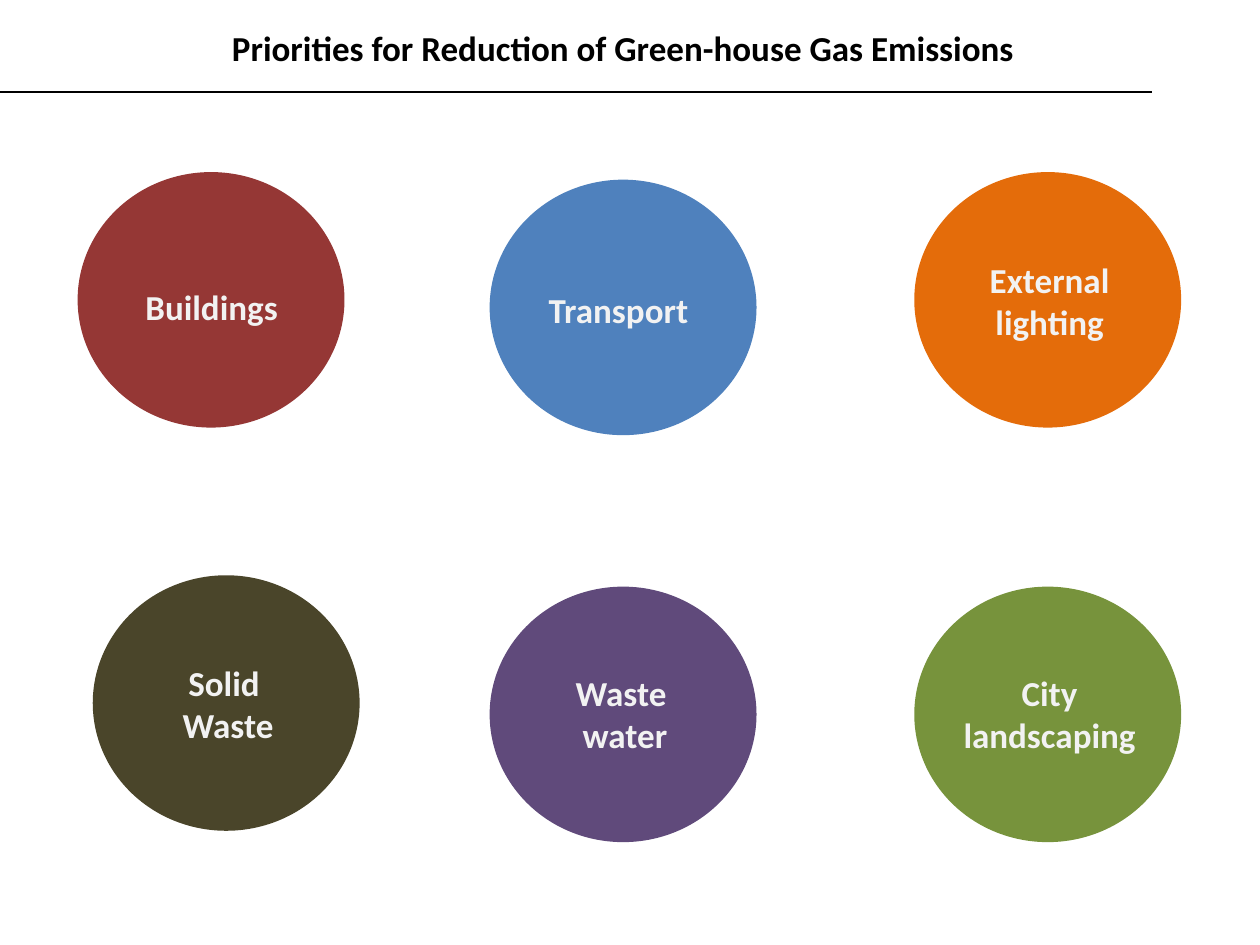
"""Build a slide of six priority areas for cutting green-house gas emissions."""
from dataclasses import dataclass

from lxml import etree
from pptx import Presentation
from pptx.dml.color import RGBColor
from pptx.enum.shapes import MSO_CONNECTOR, MSO_SHAPE
from pptx.enum.text import MSO_ANCHOR, MSO_AUTO_SIZE, PP_ALIGN
from pptx.oxml.ns import qn
from pptx.util import Inches, Pt

ELLIPSE = MSO_SHAPE.OVAL
STRAIGHT = MSO_CONNECTOR.STRAIGHT
CENTER = PP_ALIGN.CENTER
TOP = MSO_ANCHOR.TOP
FIT_SHAPE = MSO_AUTO_SIZE.SHAPE_TO_FIT_TEXT
NO_FIT = MSO_AUTO_SIZE.NONE


@dataclass(frozen=True)
class Theme:
    """Colours, typeface and sizes of the slide."""
    font: str = "Calibri"
    text_size: float = 20
    ink: str = "000000"
    label: str = "F2F2F2"
    buildings: str = "953735"
    transport: str = "4F81BD"
    lighting: str = "E46C0A"
    solid_waste: str = "4A452A"
    waste_water: str = "604A7B"
    landscaping: str = "77933C"
    rule_width: float = 1.25
    outline_width: float = 2


class SlideBuilder:
    """Draw themed elements on the current slide."""

    def __init__(self, slide, theme):
        """Keep the slide and its theme."""
        self.slide = slide
        self.theme = theme

    def set_text(self, frame, lines, color, fit):
        """Fill a text frame with centred bold lines."""
        frame.text = "\n".join(lines)
        frame.word_wrap = True
        frame.auto_size = fit
        frame.vertical_anchor = TOP
        for paragraph in frame.paragraphs:
            paragraph.alignment = CENTER
            font = paragraph.font
            font.name = self.theme.font
            font.size = Pt(self.theme.text_size)
            font.bold = True
            font.color.rgb = RGBColor.from_string(color)

    def title(self, text, left, top, width, height):
        """Place and format the title placeholder."""
        heading = self.slide.shapes.title
        heading.left, heading.top = Inches(left), Inches(top)
        heading.width, heading.height = Inches(width), Inches(height)
        self.set_text(heading.text_frame, [text], self.theme.ink, NO_FIT)

    def rule(self, left, right, top):
        """Draw a horizontal line."""
        line = self.slide.shapes.add_connector(
            STRAIGHT, Inches(left), Inches(top), Inches(right), Inches(top))
        line.line.color.rgb = RGBColor.from_string(self.theme.ink)
        line.line.width = Pt(self.theme.rule_width)
        etree.SubElement(line._element.spPr, qn("a:effectLst"))

    def priority(self, lines, color, left, top, label_left, label_top, label_height):
        """Group a coloured ellipse with its label."""
        group = self.slide.shapes.add_group_shape()
        fill = RGBColor.from_string(color)
        disc = group.shapes.add_shape(
            ELLIPSE, Inches(left), Inches(top), Inches(2.09), Inches(2))
        disc.shadow.inherit = False
        disc.fill.solid()
        disc.fill.fore_color.rgb = fill
        disc.line.color.rgb = fill
        disc.line.width = Pt(self.theme.outline_width)
        label = group.shapes.add_textbox(
            Inches(label_left), Inches(label_top), Inches(1.92), Inches(label_height))
        label.fill.solid()
        label.fill.fore_color.rgb = fill
        self.set_text(label.text_frame, lines, self.theme.label, FIT_SHAPE)


def main():
    """Build and save the slide."""
    theme = Theme()
    deck = Presentation()
    deck.slide_width, deck.slide_height = Inches(10), Inches(7.5)
    title_only = deck.slide_layouts[5]
    builder = SlideBuilder(deck.slides.add_slide(title_only), theme)
    one_line, two_lines = 0.44, 0.77
    priorities = [
        (["Buildings"], theme.buildings, 0.63, 1.38, 0.72, 2.22, one_line),
        (["Transport "], theme.transport, 3.9, 1.44, 3.98, 2.24, one_line),
        (["External lighting"], theme.lighting, 7.27, 1.38, 7.37, 2, two_lines),
        (["Solid ", "Waste"], theme.solid_waste, 0.75, 4.58, 0.85, 5.2, two_lines),
        (["Waste ", "water"], theme.waste_water, 3.9, 4.67, 4, 5.28, two_lines),
        (["City landscaping"], theme.landscaping, 7.27, 4.67, 7.37, 5.28, two_lines),
    ]
    for priority in priorities:
        builder.priority(*priority)
    builder.rule(0, 9.14, 0.73)
    builder.title("Priorities for Reduction of Green-house Gas Emissions",
                  0.47, 0.16, 8.95, one_line)
    deck.save("out.pptx")


if __name__ == "__main__":
    main()
